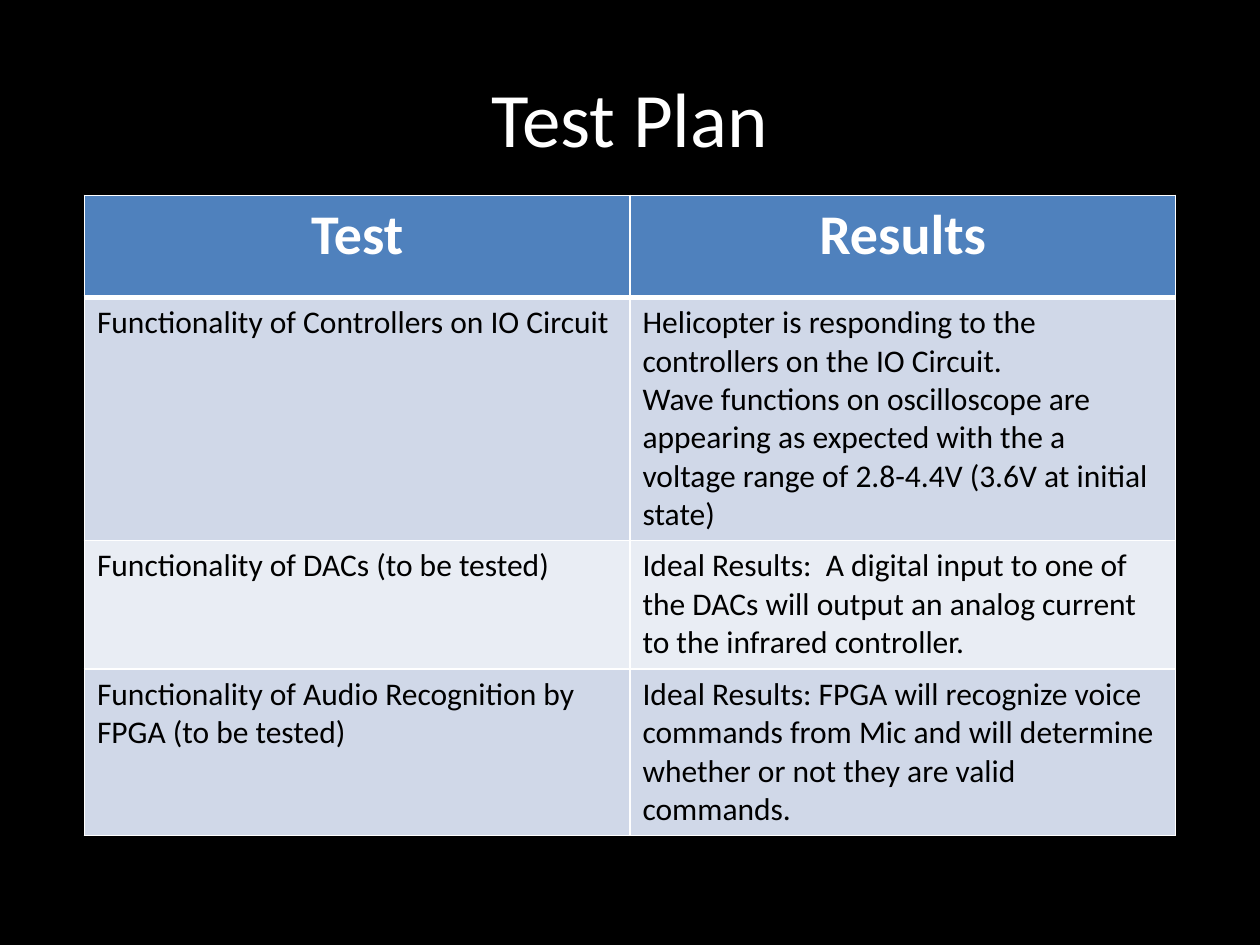
from lxml.etree import SubElement
from pptx import Presentation
from pptx.dml.color import RGBColor
from pptx.enum.text import MSO_ANCHOR, PP_ALIGN
from pptx.oxml.ns import qn
from pptx.util import Inches, Pt

FONT = "Calibri"
COLORS = {
    "background": "000000",
    "light": "FFFFFF",
    "dark": "000000",
    "header": "4F81BD",
    "odd_row": "D0D8E8",
    "even_row": "E9EDF4",
}
COLUMN_WIDTH = 4.33
ROW_HEIGHTS = [0.81, 1.93, 1.02, 1.32]
HEADERS = ["Test", "Results"]
TESTS = [
    (
        ["Functionality of Controllers on IO Circuit"],
        [
            "Helicopter is responding to the controllers on the IO Circuit.",
            "Wave functions on oscilloscope are appearing as expected with the a "
            "voltage range of 2.8-4.4V (3.6V at initial state)",
        ],
    ),
    (
        ["Functionality of DACs (to be tested)"],
        ["Ideal Results:  A digital input to one of the DACs will output an "
         "analog current to the infrared controller."],
    ),
    (
        ["Functionality of Audio Recognition by FPGA (to be tested)"],
        ["Ideal Results: FPGA will recognize voice commands from Mic and will "
         "determine whether or not they are valid commands."],
    ),
]


def rgb(name):
    return RGBColor.from_string(COLORS[name])


def write_text(text_frame, lines, size, color, bold=False, align=PP_ALIGN.LEFT):
    for index, line in enumerate(lines):
        paragraph = text_frame.add_paragraph() if index else text_frame.paragraphs[0]
        paragraph.alignment = align
        run = paragraph.add_run()
        run.text = line
        run.font.name = FONT
        run.font.size = Pt(size)
        run.font.bold = bold
        run.font.color.rgb = rgb(color)


def set_borders(cell, widths):
    properties = cell._tc.get_or_add_tcPr()
    for side, width in zip("LRTB", widths):
        line = SubElement(properties, qn(f"a:ln{side}"), w=str(Pt(width)))
        fill = SubElement(line, qn("a:solidFill"))
        SubElement(fill, qn("a:srgbClr"), val=COLORS["light"])


def style_cell(cell, fill, top=1, bottom=1):
    set_borders(cell, (1, 1, top, bottom))
    cell.fill.solid()
    cell.fill.fore_color.rgb = rgb(fill)


def add_title(slide, text):
    title = slide.shapes.title
    title.left, title.top = Inches(0.5), Inches(0.3)
    title.width, title.height = Inches(9), Inches(1.25)
    title.text_frame.vertical_anchor = MSO_ANCHOR.MIDDLE
    write_text(title.text_frame, [text], 44, "light", align=PP_ALIGN.CENTER)


def add_test_table(slide):
    frame = slide.shapes.add_table(
        len(ROW_HEIGHTS), len(HEADERS), Inches(0.67), Inches(1.55),
        Inches(COLUMN_WIDTH * len(HEADERS)), Inches(sum(ROW_HEIGHTS)))
    table = frame.table
    for column in table.columns:
        column.width = Inches(COLUMN_WIDTH)
    for row, height in zip(table.rows, ROW_HEIGHTS):
        row.height = Inches(height)

    for column, header in enumerate(HEADERS):
        cell = table.cell(0, column)
        style_cell(cell, "header", bottom=3)
        write_text(cell.text_frame, [header], 32, "light", True, PP_ALIGN.CENTER)
    for row, test in enumerate(TESTS, start=1):
        for column, lines in enumerate(test):
            cell = table.cell(row, column)
            style_cell(cell, "odd_row" if row % 2 else "even_row",
                       top=3 if row == 1 else 1)
            write_text(cell.text_frame, lines, 18, "dark")


def main():
    presentation = Presentation()
    presentation.slide_width, presentation.slide_height = Inches(10), Inches(7.5)
    slide = presentation.slides.add_slide(presentation.slide_layouts[5])
    slide.background.fill.solid()
    slide.background.fill.fore_color.rgb = rgb("background")
    add_title(slide, "Test Plan")
    add_test_table(slide)
    presentation.save("out.pptx")


if __name__ == "__main__":
    main()
